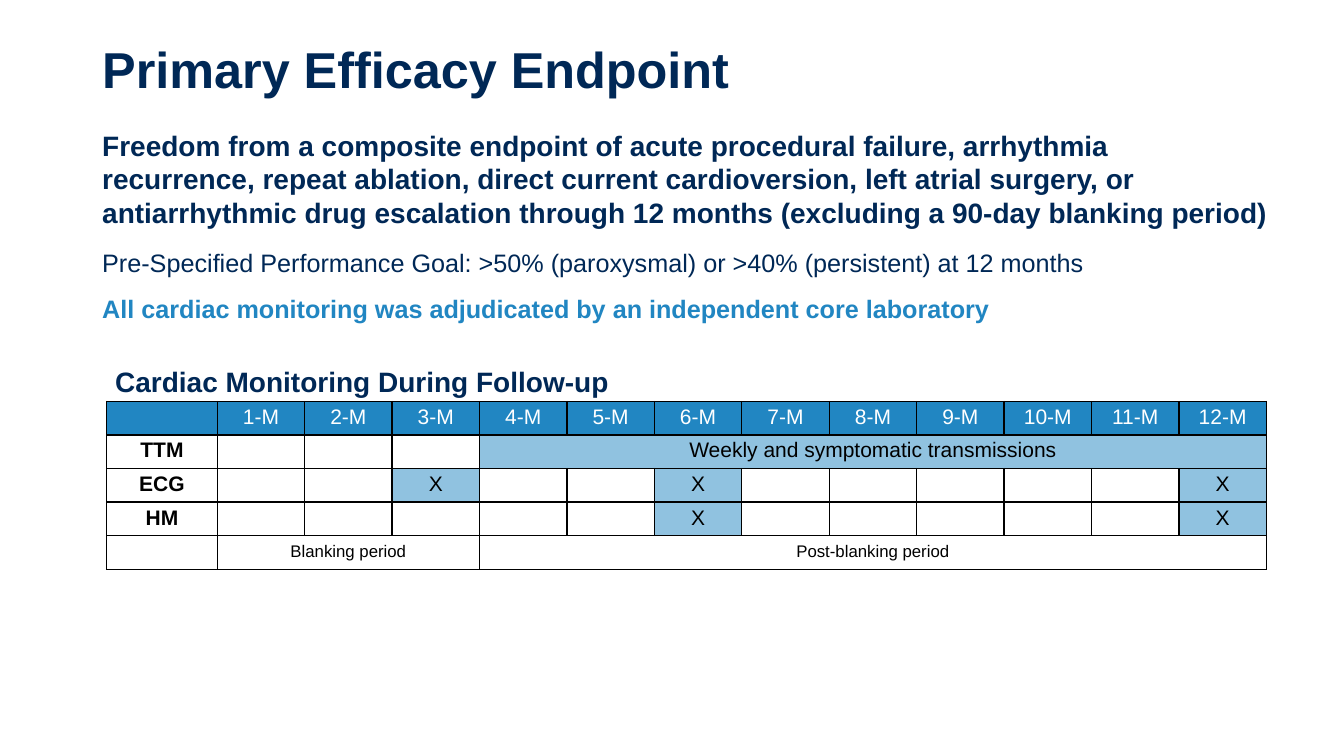
from pptx import Presentation
from pptx.dml.color import RGBColor
from pptx.enum.text import PP_ALIGN as Align
from pptx.oxml import parse_xml
from pptx.oxml.ns import nsdecls
from pptx.util import Pt

NAVY, BLUE, PALE, BLACK, WHITE = "002856", "2186C2", "90C2E0", "000000", "FFFFFF"


def color(value):
    return RGBColor.from_string(value)


def write(p, text, size, fill, bold=False):
    """Add text to the paragraph, with a line break at each newline."""
    for i, line in enumerate(text.split("\n")):
        if i:
            p.add_line_break()
        r = p.add_run()
        r.text = line
        r.font.color.rgb = color(fill)
        for name, value in {"name": "Arial", "size": Pt(size), "bold": bold}.items():
            setattr(r.font, name, value)


prs = Presentation()
prs.slide_width, prs.slide_height = Pt(960), Pt(540)
s = prs.slides.add_slide(prs.slide_layouts[6])

# Title and body: text, size, colour, bold, space before, indent
boxes = [
    ((73, 26.4, 702, 45.4), [("Primary Efficacy Endpoint", 36, NAVY, True, 0, 0)]),
    ((73, 90.5, 840, 195), [
        ("Freedom from a composite endpoint of acute procedural failure, arrhythmia\n"
         "recurrence, repeat ablation, direct current cardioversion, left atrial surgery, or\n"
         "antiarrhythmic drug escalation through 12 months (excluding a 90-day blanking period)",
         20, NAVY, True, 0, 0),
        ("Pre-Specified Performance Goal: >50% (paroxysmal) or >40% (persistent) at 12 months",
         18, NAVY, False, 13.1, 0),
        ("All cardiac monitoring was adjudicated by an independent core laboratory",
         18, BLUE, True, 11.2, 0),
        ("Cardiac Monitoring During Follow-up", 20, NAVY, True, 29.6, 9.2),
    ]),
]
for place, paragraphs in boxes:
    tf = s.shapes.add_textbox(*map(Pt, place)).text_frame
    tf.word_wrap = True
    for name, value in {"left": 0, "right": 0, "top": 1, "bottom": 0}.items():
        setattr(tf, f"margin_{name}", Pt(value))
    for i, (text, size, fill, bold, before, indent) in enumerate(paragraphs):
        p = tf.add_paragraph() if i else tf.paragraphs[0]
        if before:
            p.space_before = Pt(before)
        if indent:
            p._p.get_or_add_pPr().set("marL", str(Pt(indent)))
        write(p, text, size, fill, bold)

# Monitoring schedule: column 0 holds the method, columns 1-12 the months
LABEL_W, MONTH_W, ROW_H = 79, 62.47, 24
schedule = {(0, m): f"{m}-M" for m in range(1, 13)}
schedule |= {(1, 0): "TTM", (2, 0): "ECG", (3, 0): "HM"}
schedule |= {(1, 4): "Weekly and symptomatic transmissions"}
schedule |= {(2, m): "X" for m in (3, 6, 12)}
schedule |= {(3, m): "X" for m in (6, 12)}
schedule |= {(4, 1): "Blanking period", (4, 4): "Post-blanking period"}

table = s.shapes.add_table(5, 13, Pt(76.2), Pt(286.7),
                           Pt(LABEL_W + 12 * MONTH_W), Pt(5 * ROW_H)).table
table.first_row = table.horz_banding = False
for row in table.rows:
    row.height = Pt(ROW_H)
for i, column in enumerate(table.columns):
    column.width = Pt(MONTH_W if i else LABEL_W)
for row, first, last in [(1, 4, 12), (4, 1, 3), (4, 4, 12)]:
    table.cell(row, first).merge(table.cell(row, last))

for row in range(5):
    for col in range(13):
        cell = table.cell(row, col)
        text = schedule.get((row, col))
        top = 0 if not text else 5 if row == 4 else 2.9
        for name, value in {"left": 0, "right": 0, "top": top, "bottom": 0}.items():
            setattr(cell, f"margin_{name}", Pt(value))
        for side in ("lnL", "lnR", "lnT", "lnB"):
            cell._tc.get_or_add_tcPr().append(parse_xml(
                f'<a:{side} {nsdecls("a")} w="12700"><a:solidFill>'
                f'<a:srgbClr val="{BLACK}"/></a:solidFill></a:{side}>'))
        if row == 0 or (text and col and row < 4):
            cell.fill.solid()
            cell.fill.fore_color.rgb = color(PALE if row else BLUE)
        else:
            cell.fill.background()
        if text:
            p = cell.text_frame.paragraphs[0]
            p.alignment = Align.CENTER
            write(p, text, 12 if row == 4 else 15, BLACK if row else WHITE, col == 0)

prs.save("out.pptx")
